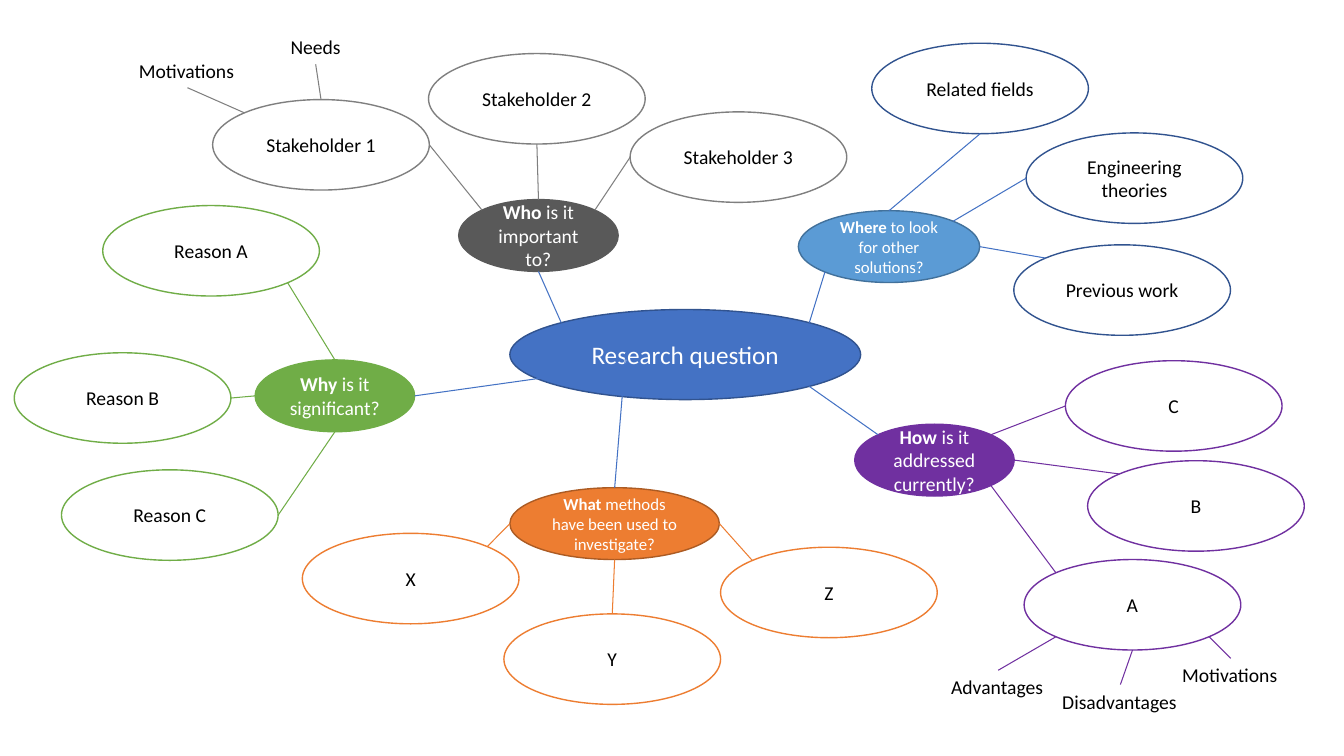
from dataclasses import dataclass
from enum import IntEnum
from math import cos, pi, sin

from lxml.etree import SubElement
from pptx import Presentation
from pptx.dml.color import RGBColor
from pptx.enum.shapes import MSO_CONNECTOR, MSO_SHAPE
from pptx.enum.text import MSO_ANCHOR, MSO_AUTO_SIZE, PP_ALIGN
from pptx.oxml.ns import qn
from pptx.util import Cm, Pt

FONT = "Calibri"
BLUE, NAVY, PURPLE, GREEN, ORANGE, GRAY = (
    "4472C4", "31538F", "7030A0", "70AD47", "ED7D31", "7F7F7F")
LEAF_SIZE = (5.46, 2.28)
HUB_HEIGHT = 1.81
LABEL_HEIGHT = 0.86


class Site(IntEnum):
    """Points on an ellipse, counter-clockwise in steps of 45 degrees."""
    TOP = 0
    TOP_LEFT = 1
    LEFT = 2
    BOTTOM_LEFT = 3
    BOTTOM = 4
    BOTTOM_RIGHT = 5
    RIGHT = 6
    TOP_RIGHT = 7


@dataclass
class Oval:
    """An ellipse in centimetres; its bold lead comes before its text."""
    left: float
    top: float
    width: float
    height: float
    text: str
    fill: str
    line: str
    size: int = 14
    color: str = "FFFFFF"
    lead: str = ""

    def point(self, site: Site) -> tuple[float, float]:
        angle = site * pi / 4
        return (self.left + self.width / 2 * (1 - sin(angle)),
                self.top + self.height / 2 * (1 - cos(angle)))


@dataclass
class Label:
    """Plain text tied to a leaf by a line from its top or bottom centre."""
    left: float
    top: float
    width: float
    text: str
    site: Site
    above: bool = False
    align: PP_ALIGN = PP_ALIGN.LEFT


@dataclass
class Leaf:
    left: float
    top: float
    text: str
    hub_site: Site
    site: Site
    labels: tuple[Label, ...] = ()


@dataclass
class Branch:
    hub: Oval
    hub_site: Site
    root_point: tuple[float, float]
    outline: str
    link: str
    leaves: list[Leaf]


# Content
ROOT = Oval(12.85, 7.8, 8.84, 2.27, "Research question", BLUE, NAVY, 18)

BRANCHES = [
    Branch(
        Oval(20.12, 5.31, 4.57, HUB_HEIGHT, " to look for other solutions?",
             "5B9BD5", "42719B", 12, lead="Where"),
        Site.BOTTOM_LEFT, ROOT.point(Site.TOP_RIGHT), NAVY, BLUE,
        [Leaf(25.55, 6.17, "Previous work", Site.RIGHT, Site.TOP_LEFT),
         Leaf(25.86, 3.35, "Engineering theories", Site.TOP_RIGHT, Site.LEFT),
         Leaf(21.97, 1.09, "Related fields", Site.TOP, Site.BOTTOM)]),
    Branch(
        Oval(21.54, 10.69, 4.02, HUB_HEIGHT, " is it addressed currently?",
             PURPLE, PURPLE, lead="How"),
        Site.TOP_LEFT, ROOT.point(Site.BOTTOM_RIGHT), PURPLE, PURPLE,
        [Leaf(25.81, 14.1, "A", Site.BOTTOM_RIGHT, Site.TOP_LEFT, (
            Label(23.72, 16.89, 2.87, "Advantages", Site.BOTTOM_LEFT),
            Label(26.52, 17.25, 3.43, "Disadvantages", Site.BOTTOM),
            Label(29.54, 16.59, 2.95, "Motivations", Site.BOTTOM_RIGHT))),
         Leaf(27.41, 11.61, "B", Site.RIGHT, Site.TOP_LEFT),
         Leaf(26.85, 9.09, "C", Site.TOP_RIGHT, Site.LEFT)]),
    Branch(
        Oval(12.85, 12.29, 5.28, HUB_HEIGHT, " methods have been used to investigate?",
             ORANGE, "AC5B23", 12, lead="What"),
        Site.TOP, (15.77, 8.89), ORANGE, ORANGE,
        [Leaf(18.16, 13.79, "Z", Site.RIGHT, Site.TOP_LEFT),
         Leaf(12.7, 15.47, "Y", Site.BOTTOM, Site.TOP),
         Leaf(7.62, 13.44, "X", Site.LEFT, Site.TOP_RIGHT)]),
    Branch(
        Oval(11.56, 5.03, 4.02, HUB_HEIGHT, " is it important to?",
             "595959", "595959", lead="Who"),
        Site.BOTTOM, ROOT.point(Site.TOP_LEFT), GRAY, GRAY,
        [Leaf(15.88, 2.82, "Stakeholder 3", Site.TOP_RIGHT, Site.LEFT),
         Leaf(10.8, 1.35, "Stakeholder 2", Site.TOP, Site.BOTTOM),
         Leaf(5.36, 2.51, "Stakeholder 1", Site.TOP_LEFT, Site.RIGHT, (
             Label(3.25, 1.35, 2.95, "Motivations", Site.TOP_LEFT, True),
             Label(6.48, 0.76, 2.95, "Needs", Site.TOP, True, PP_ALIGN.CENTER)))]),
    Branch(
        Oval(6.43, 9.07, 4.02, HUB_HEIGHT, " is it significant?",
             GREEN, GREEN, lead="Why"),
        Site.RIGHT, (14.2, 9.45), GREEN, GREEN,
        [Leaf(2.59, 5.18, "Reason A", Site.TOP, Site.BOTTOM_RIGHT),
         Leaf(1.55, 11.84, "Reason C", Site.BOTTOM, Site.RIGHT),
         Leaf(0.36, 8.89, "Reason B", Site.LEFT, Site.RIGHT)]),
]


# Drawing functions
def rgb(value: str) -> RGBColor:
    return RGBColor.from_string(value)


def format_paragraph(para, size: int, color: str, align: PP_ALIGN) -> None:
    para.alignment = align
    para.font.name = FONT
    para.font.size = Pt(size)
    para.font.color.rgb = rgb(color)


def draw_oval(page, oval: Oval) -> None:
    shape = page.shapes.add_shape(
        MSO_SHAPE.OVAL, Cm(oval.left), Cm(oval.top), Cm(oval.width), Cm(oval.height))
    shape.shadow.inherit = False
    shape.fill.solid()
    shape.fill.fore_color.rgb = rgb(oval.fill)
    shape.line.color.rgb = rgb(oval.line)
    shape.line.width = Pt(1)
    frame = shape.text_frame
    frame.word_wrap = True
    frame.vertical_anchor = MSO_ANCHOR.MIDDLE
    para = frame.paragraphs[0]
    format_paragraph(para, oval.size, oval.color, PP_ALIGN.CENTER)
    if oval.lead:
        span = para.add_run()
        span.text = oval.lead
        span.font.bold = True
    para.add_run().text = oval.text


def draw_link(page, start: tuple[float, float], end: tuple[float, float], color: str) -> None:
    link = page.shapes.add_connector(
        MSO_CONNECTOR.STRAIGHT, *(Cm(length) for length in (*start, *end)))
    link.line.color.rgb = rgb(color)
    link.line.width = Pt(0.75)
    SubElement(link.element.spPr, qn("a:effectLst"))


def draw_label(page, label: Label) -> None:
    box = page.shapes.add_textbox(
        Cm(label.left), Cm(label.top), Cm(label.width), Cm(LABEL_HEIGHT))
    box.text_frame.word_wrap = False
    box.text_frame.auto_size = MSO_AUTO_SIZE.SHAPE_TO_FIT_TEXT
    para = box.text_frame.paragraphs[0]
    para.text = label.text
    format_paragraph(para, 14, "000000", label.align)


def draw_branch(page, branch: Branch) -> None:
    draw_oval(page, branch.hub)
    draw_link(page, branch.root_point, branch.hub.point(branch.hub_site), BLUE)
    for leaf in branch.leaves:
        oval = Oval(leaf.left, leaf.top, *LEAF_SIZE, leaf.text,
                    "FFFFFF", branch.outline, color="000000")
        draw_oval(page, oval)
        draw_link(page, branch.hub.point(leaf.hub_site), oval.point(leaf.site), branch.link)
        for label in leaf.labels:
            edge = label.top + (LABEL_HEIGHT if label.above else 0)
            draw_link(page, oval.point(label.site),
                      (label.left + label.width / 2, edge), branch.link)
            draw_label(page, label)


def main() -> None:
    deck = Presentation()
    deck.slide_width, deck.slide_height = Cm(33.87), Cm(19.05)
    page = deck.slides.add_slide(deck.slide_layouts[6])
    draw_oval(page, ROOT)
    for branch in BRANCHES:
        draw_branch(page, branch)
    deck.save("out.pptx")


if __name__ == "__main__":
    main()
